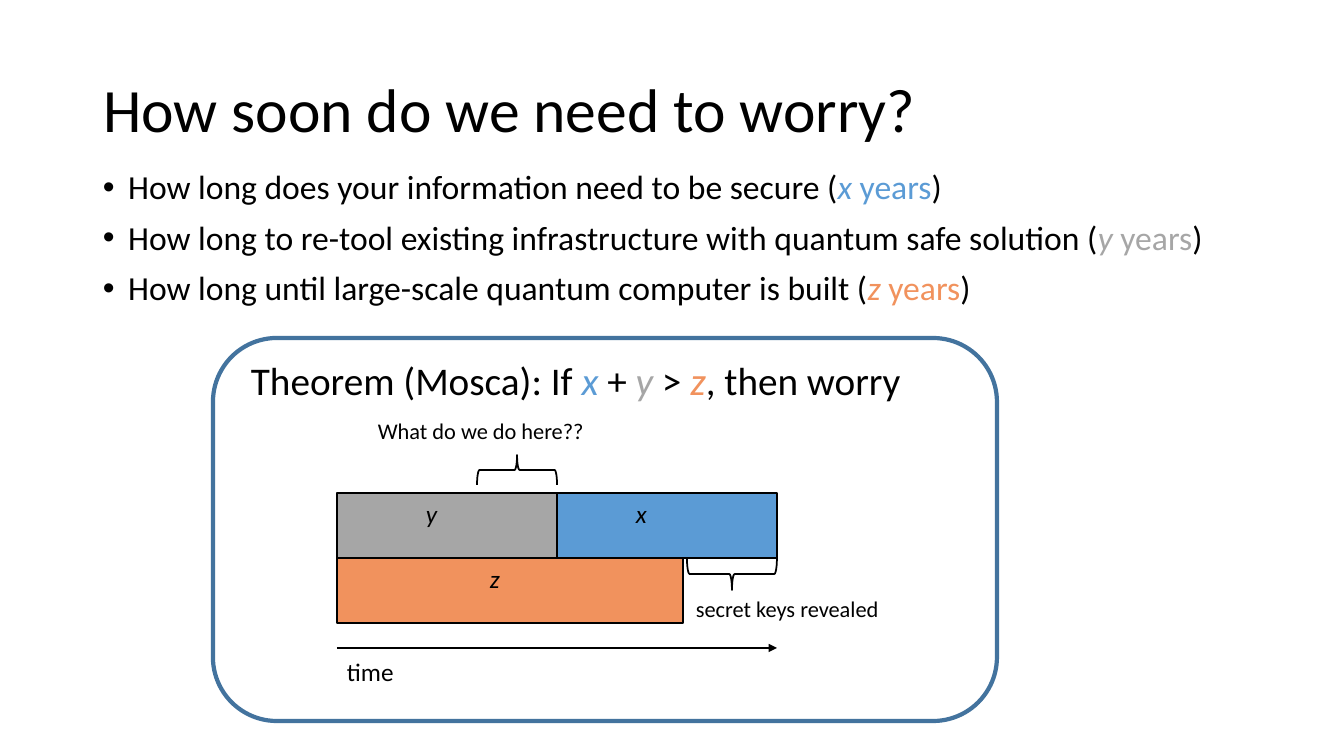
"""Build the slide on how soon to worry about quantum computers."""
from lxml import etree
from pptx import Presentation
from pptx.dml.color import RGBColor
from pptx.enum.shapes import MSO_CONNECTOR, MSO_SHAPE
from pptx.enum.text import MSO_ANCHOR, MSO_AUTO_SIZE, PP_ALIGN
from pptx.oxml.ns import qn
from pptx.util import Inches, Pt

RECT, ROUNDED, BRACE = MSO_SHAPE.RECTANGLE, MSO_SHAPE.ROUNDED_RECTANGLE, MSO_SHAPE.LEFT_BRACE
STRAIGHT = MSO_CONNECTOR.STRAIGHT
TOP, MIDDLE = MSO_ANCHOR.TOP, MSO_ANCHOR.MIDDLE
LEFT, NO_FIT = PP_ALIGN.LEFT, MSO_AUTO_SIZE.NONE

PX = 914400 / 100.8
FONT = "Calibri"
COLORS = {"ink": "000000", "x": "5B9BD5", "y": "A6A6A6", "z": "F1925D", "frame": "43739E"}

TITLE = "How soon do we need to worry?"
QUESTIONS = [
    [("How long does your information need to be secure (", "ink"),
     ("x", "x"), (" years", "x"), (")", "ink")],
    [("How long to re-tool existing infrastructure with quantum safe solution (", "ink"),
     ("y", "y"), (" years", "y"), (")", "ink")],
    [("How long until large-scale quantum computer is built (", "ink"),
     ("z", "z"), (" years", "z"), (")", "ink")],
]
THEOREM = [("Theorem (Mosca): If ", "ink"), ("x", "x"), (" + ", "ink"), ("y", "y"),
           (" > ", "ink"), ("z", "z"), (", then worry", "ink")]

START, BARS_TOP, BAR_HEIGHT = 337, 493, 65
SPAN_XY, SPAN_Z = 220, 346
END = START + 2 * SPAN_XY
BARS = [
    ("x", START + SPAN_XY, 0, SPAN_XY, 626),
    ("y", START, 0, SPAN_XY, 416),
    ("z", START, 1, SPAN_Z, 480),
]
BRACES = [(687, END, 574, 32, 270), (477, START + SPAN_XY, 470, 30, 90)]
CAPTIONS = [
    ([("time", "ink")], (START, 651, 179, 40), 18),
    ([("What do we do here??", "ink")], (368, 412, 450, 37), 16),
    (THEOREM, (241, 351, 690, 57), 28),
    ([("secret keys revealed", "ink")], (686, 590, 416, 37), 16),
]
FRAME = (213, 338, 784, 383)
TIME_Y = 648


def emu(*lengths):
    return [round(length * PX) for length in lengths]


def rgb(name):
    return RGBColor.from_string(COLORS[name])


def write(frame, text, size, anchor=TOP, spacing=1.0, before=0, bullet=False):
    frame.word_wrap = True
    frame.auto_size = NO_FIT
    frame.vertical_anchor = anchor
    for index, runs in enumerate(text):
        paragraph = frame.add_paragraph() if index else frame.paragraphs[0]
        paragraph.alignment = LEFT
        paragraph.line_spacing = spacing
        paragraph.space_before = Pt(before)
        if bullet:
            properties = paragraph._p.get_or_add_pPr()
            properties.set("marL", str(Inches(0.25)))
            properties.set("indent", str(-Inches(0.25)))
            etree.SubElement(properties, qn("a:buFont")).set("typeface", "Arial")
            etree.SubElement(properties, qn("a:buChar")).set("char", "•")
        for words, color in runs:
            run = paragraph.add_run()
            run.text = words
            run.font.name = FONT
            run.font.size = Pt(size)
            run.font.italic = words in ("x", "y", "z")
            run.font.color.rgb = rgb(color)


def add_text(slide, text, box, size, **layout):
    write(slide.shapes.add_textbox(*emu(*box)).text_frame, text, size, **layout)


def add_outline(slide, kind, box, line, width, fill=None):
    shape = slide.shapes.add_shape(kind, *emu(*box))
    shape.shadow.inherit = False
    if fill:
        shape.fill.solid()
        shape.fill.fore_color.rgb = rgb(fill)
    else:
        shape.fill.background()
    shape.line.color.rgb = rgb(line)
    shape.line.width = Pt(width)
    return shape


def add_time_arrow(slide):
    arrow = slide.shapes.add_connector(STRAIGHT, *emu(START, TIME_Y, END, TIME_Y))
    arrow.line.color.rgb = rgb("ink")
    arrow.line.width = Pt(1.75)
    etree.SubElement(arrow.line._get_or_add_ln(), qn("a:tailEnd")).set("type", "triangle")
    etree.SubElement(arrow._element.spPr, qn("a:effectLst"))


def main():
    deck = Presentation()
    deck.slide_width, deck.slide_height = emu(1344, 756)
    slide = deck.slides.add_slide(deck.slide_layouts[5])

    add_text(slide, QUESTIONS, (93, 166, 1159, 554), 24, spacing=0.9, before=10, bullet=True)
    title = slide.shapes.title
    title.left, title.top, title.width, title.height = emu(93, 40, 1159, 146)
    write(title.text_frame, [[(TITLE, "ink")]], 44, anchor=MIDDLE, spacing=0.9)

    for name, left, row, width, _ in BARS:
        box = (left, BARS_TOP + row * BAR_HEIGHT, width, BAR_HEIGHT)
        add_outline(slide, RECT, box, "ink", 1.75, fill=name)
    for name, _, row, _, label_left in BARS:
        box = (label_left, BARS_TOP + row * BAR_HEIGHT, 60, BAR_HEIGHT)
        add_text(slide, [[(name, "ink")]], box, 18)

    add_time_arrow(slide)
    for left, right, middle, depth, turn in BRACES:
        length = right - left
        box = ((left + right - depth) / 2, middle - length / 2, depth, length)
        add_outline(slide, BRACE, box, "ink", 1.25).rotation = turn
    for runs, box, size in CAPTIONS:
        add_text(slide, [runs], box, size)
    add_outline(slide, ROUNDED, FRAME, "frame", 3)

    deck.save("out.pptx")


if __name__ == "__main__":
    main()
